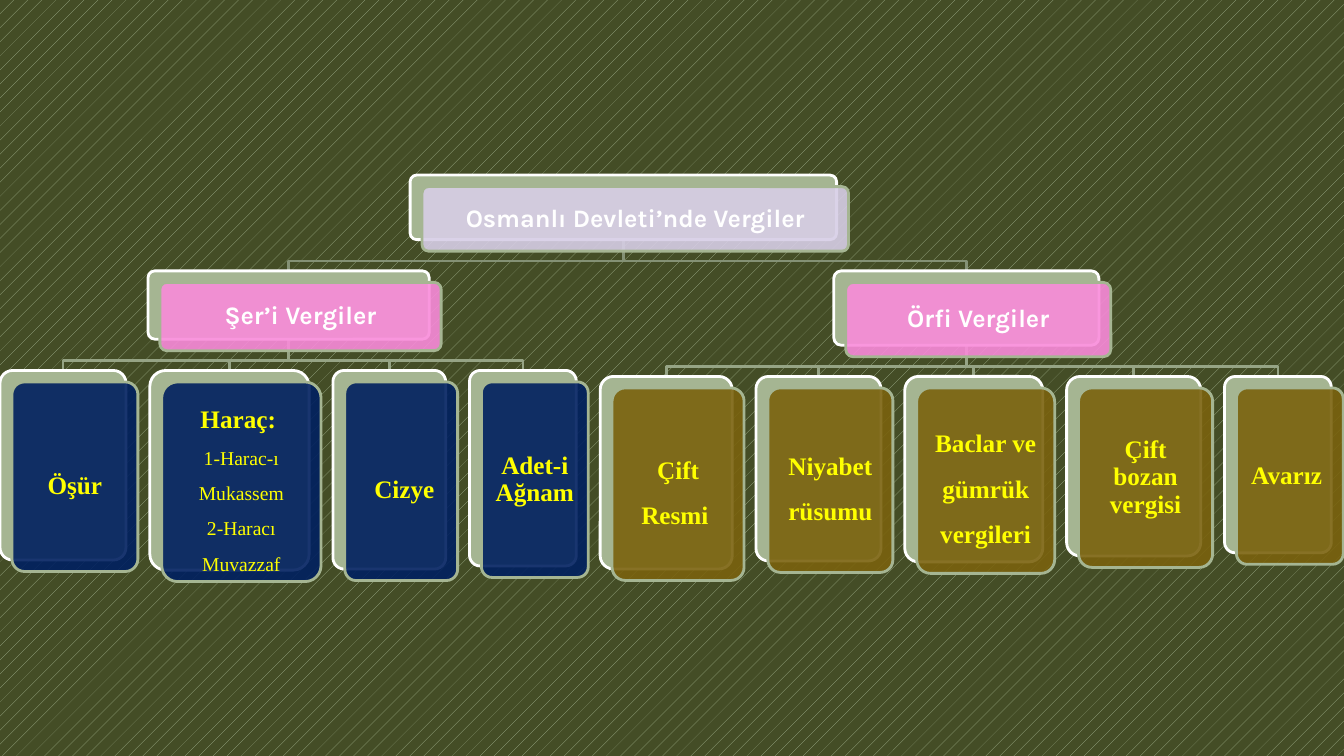
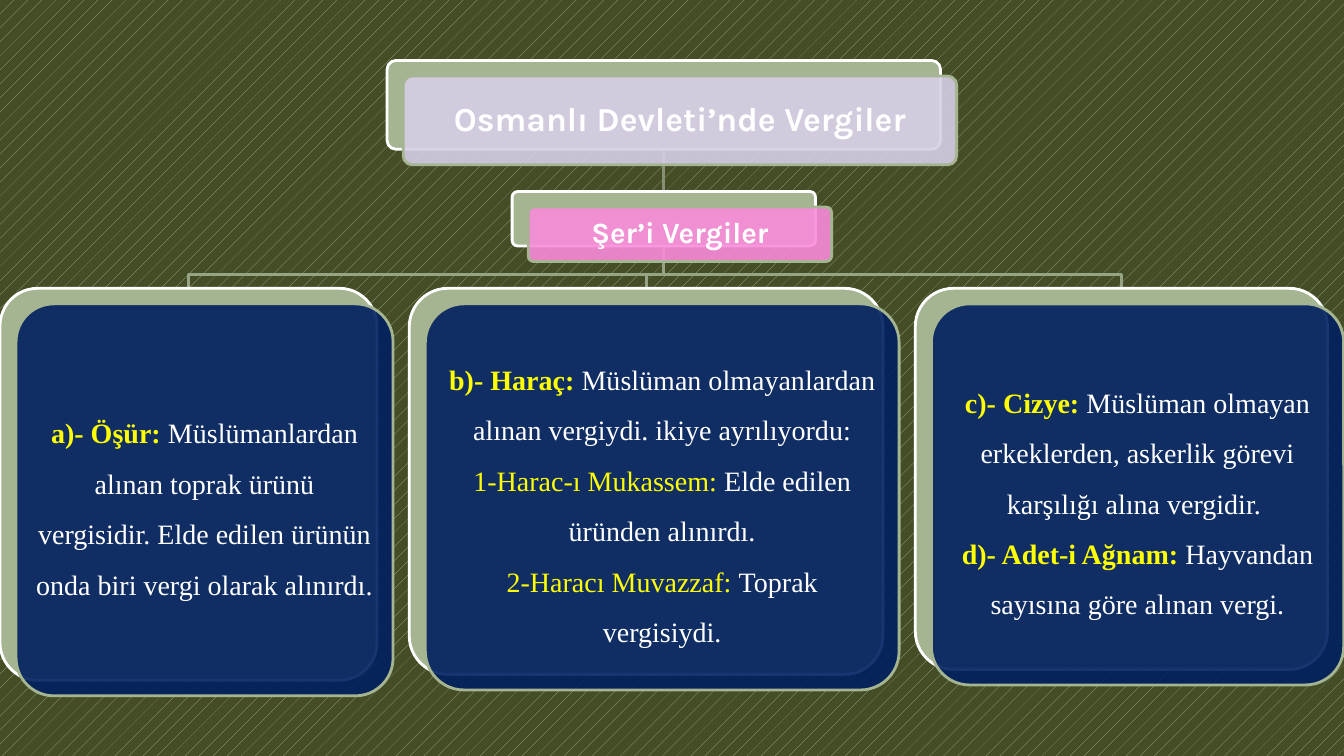
from collections import namedtuple

from lxml.etree import SubElement
from pptx import Presentation
from pptx.dml.color import RGBColor
from pptx.enum.dml import MSO_PATTERN as Pattern
from pptx.enum.shapes import MSO_CONNECTOR as Conn, MSO_SHAPE as Kind
from pptx.enum.text import MSO_ANCHOR as Anchor, PP_ALIGN as Align
from pptx.oxml.ns import qn
from pptx.util import Pt

OLIVE = RGBColor(0x44, 0x4D, 0x26)
SAGE = RGBColor(0xA5, 0xB5, 0x92)
MOSS = RGBColor(0x84, 0x91, 0x75)
FERN = RGBColor(0x96, 0xA4, 0x85)
LILAC = RGBColor(0xD7, 0xCE, 0xE6)
PINK = RGBColor(0xF9, 0x8B, 0xDA)
NAVY = RGBColor(0x00, 0x20, 0x60)
BROWN = RGBColor(0x7A, 0x62, 0x0E)
YELLOW = RGBColor(0xFF, 0xFF, 0x00)
WHITE = RGBColor(0xFF, 0xFF, 0xFF)

HEAD, BODY = "Karla", "Times New Roman"
TIGHT, LOOSE = 0.9, 1.5

Ink = namedtuple("Ink", "font size color bold")
Card = namedtuple("Card", "width height text lead")


class Chart:
    """Tree of taxes: cards with an offset front, joined by lines."""

    def __init__(self):
        self.deck = Presentation()
        self.deck.slide_width, self.deck.slide_height = Pt(960), Pt(540)

    def page(self, scale):
        """Start a slide; scale sets the card offset and the row distance."""
        self.slide = self.deck.slides.add_slide(self.deck.slide_layouts[6])
        self.shapes = self.slide.shapes
        self.dx, self.dy, self.drop = 8.5 * scale, 8.2 * scale, 22.3 * scale
        fill = self.slide.background.fill
        fill.patterned()
        fill.pattern = Pattern.PERCENT_5
        fill.fore_color.rgb, fill.back_color.rgb = SAGE, OLIVE

    def box(self, x, y, card, fill, edge):
        box = self.shapes.add_shape(Kind.ROUNDED_RECTANGLE, Pt(x), Pt(y),
                                    Pt(card.width), Pt(card.height))
        box.adjustments[0] = 0.1
        box.shadow.inherit = False
        box.fill.solid()
        box.fill.fore_color.rgb = fill
        box.line.color.rgb, box.line.width = edge, Pt(2)
        return box

    def label(self, frame, card, ink):
        """Fill the frame with a plain text or with paragraphs of (text, ink)."""
        frame.word_wrap, frame.vertical_anchor = True, Anchor.MIDDLE
        frame.margin_left = frame.margin_right = Pt(ink.size * 0.3)
        frame.margin_top = frame.margin_bottom = Pt(ink.size * 0.3)
        lines = [[(card.text, ink)]] if isinstance(card.text, str) else card.text
        for i, line in enumerate(lines):
            para = frame.paragraphs[0] if i == 0 else frame.add_paragraph()
            para.alignment, para.line_spacing = Align.CENTER, card.lead
            for text, style in line:
                run = para.add_run()
                run.text = text
                font = run.font
                font.name, font.size = style.font, Pt(style.size)
                font.bold, font.color.rgb = style.bold, style.color

    def node(self, x, y, card, fill, ink):
        back = self.box(x, y, card, SAGE, WHITE)
        front = self.box(x + self.dx, y + self.dy, card, fill, SAGE)
        solid = front.element.spPr.find(qn("a:solidFill"))
        SubElement(solid[0], qn("a:alpha"), val="90000")
        self.label(front.text_frame, card, ink)
        return back

    def child(self, top, x, card, fill, ink, tone):
        """Add a node one row below top and join the two."""
        y = (top.top + top.height) / Pt(1) + self.drop
        back = self.node(x, y, card, fill, ink)
        self.link(top, back, tone)
        return back

    def row(self, top, x, cards, fill, ink):
        """Add children side by side; return where the next one would start."""
        for card in cards:
            self.child(top, x, card, fill, ink, FERN)
            x += card.width + 2 * self.dx
        return x

    def link(self, top, low, tone):
        start, end = (s.left + s.width // 2 for s in (top, low))
        foot = top.top + top.height
        if abs(start - end) < Pt(1):
            line = self.shapes.add_connector(Conn.STRAIGHT, start, foot, end, low.top)
            line.begin_connect(top, 2)
            line.end_connect(low, 0)
            SubElement(line.element.spPr, qn("a:effectLst"))
        else:
            bend = foot + int((low.top - foot) * 0.68)
            trace = self.shapes.build_freeform(start, foot)
            trace.add_line_segments([(start, bend), (end, bend), (end, low.top)],
                                    close=False)
            line = trace.convert_to_shape()
            line.shadow.inherit = False
            line.fill.background()
        line.line.color.rgb, line.line.width = tone, Pt(2)
        self.shapes.element.insert(2, line.element)  # behind all cards


def tree(chart):
    title = Ink(HEAD, 18, WHITE, True)
    name = Ink(BODY, 18, YELLOW, True)
    item = Ink(BODY, 14, YELLOW, False)
    chart.page(1)
    root = chart.node(293, 125.1, Card(304.6, 46.1, "Osmanlı Devleti’nde Vergiler", TIGHT),
                      LILAC, title)
    holy = chart.child(root, 105.7, Card(200.9, 48.8, "Şer’i Vergiler", TIGHT),
                       PINK, title, MOSS)
    civil = chart.child(root, 595.6, Card(189.4, 53.1, "Örfi Vergiler", TIGHT),
                        PINK, title, MOSS)
    levy = [[("Haraç: ", name)], [("1-Harac-ı Mukassem", item)],
            [("2-Haracı Muvazzaf", item)]]
    x = chart.row(holy, 0, [
        Card(90, 135.4, "Öşür", LOOSE),
        Card(113.8, 142.6, levy, LOOSE),
        Card(80.6, 141.9, " Cizye", LOOSE),
        Card(76.3, 139.7, "Adet-i Ağnam", TIGHT),
    ], NAVY, name)
    chart.row(civil, x, [
        Card(94.3, 137.5, "Çift Resmi ", LOOSE),
        Card(89.3, 131.8, "Niyabet rüsumu", LOOSE),
        Card(98.6, 132.5, "Baclar ve gümrük vergileri", LOOSE),
        Card(95.8, 128.2, "Çift bozan vergisi", TIGHT),
        Card(76.3, 126, "Avarız ", TIGHT),
    ], BROWN, name)


def detail(chart):
    term = Ink(BODY, 20, YELLOW, True)
    kind = Ink(BODY, 20, YELLOW, False)
    text = Ink(BODY, 20, WHITE, False)
    chart.page(1.355)
    root = chart.node(276.5, 43.2, Card(395.3, 63.4, "Osmanlı Devleti’nde Vergiler", TIGHT),
                      LILAC, Ink(HEAD, 24, WHITE, True))
    holy = chart.child(root, 365.8, Card(216.7, 38.9, "Şer’i Vergiler", TIGHT),
                       PINK, Ink(HEAD, 21, WHITE, True), MOSS)
    tithe = [[("a)- Öşür: ", term),
              ("Müslümanlardan alınan toprak ürünü vergisidir. Elde edilen ürünün "
               "onda biri vergi olarak alınırdı.", text)]]
    levy = [[("b)- Haraç: ", term),
             ("Müslüman olmayanlardan alınan vergiydi. ikiye ayrılıyordu:", text)],
            [("1-Harac-ı Mukassem: ", kind), ("Elde edilen üründen alınırdı.", text)],
            [("2-Haracı Muvazzaf: ", kind), ("Toprak vergisiydi.", text)]]
    poll = [[("c)- Cizye: ", term),
             ("Müslüman olmayan erkeklerden, askerlik görevi karşılığı alına vergidir. ",
              text)],
            [("d)- Adet-i Ağnam: ", term),
             ("Hayvandan sayısına göre alınan vergi.", text)]]
    chart.row(holy, 0, [
        Card(269.3, 280, tithe, LOOSE),
        Card(338.4, 275.8, levy, LOOSE),
        Card(294.5, 272.2, poll, LOOSE),
    ], NAVY, term)


def main():
    chart = Chart()
    tree(chart)
    detail(chart)
    chart.deck.save("out.pptx")


if __name__ == "__main__":
    main()
